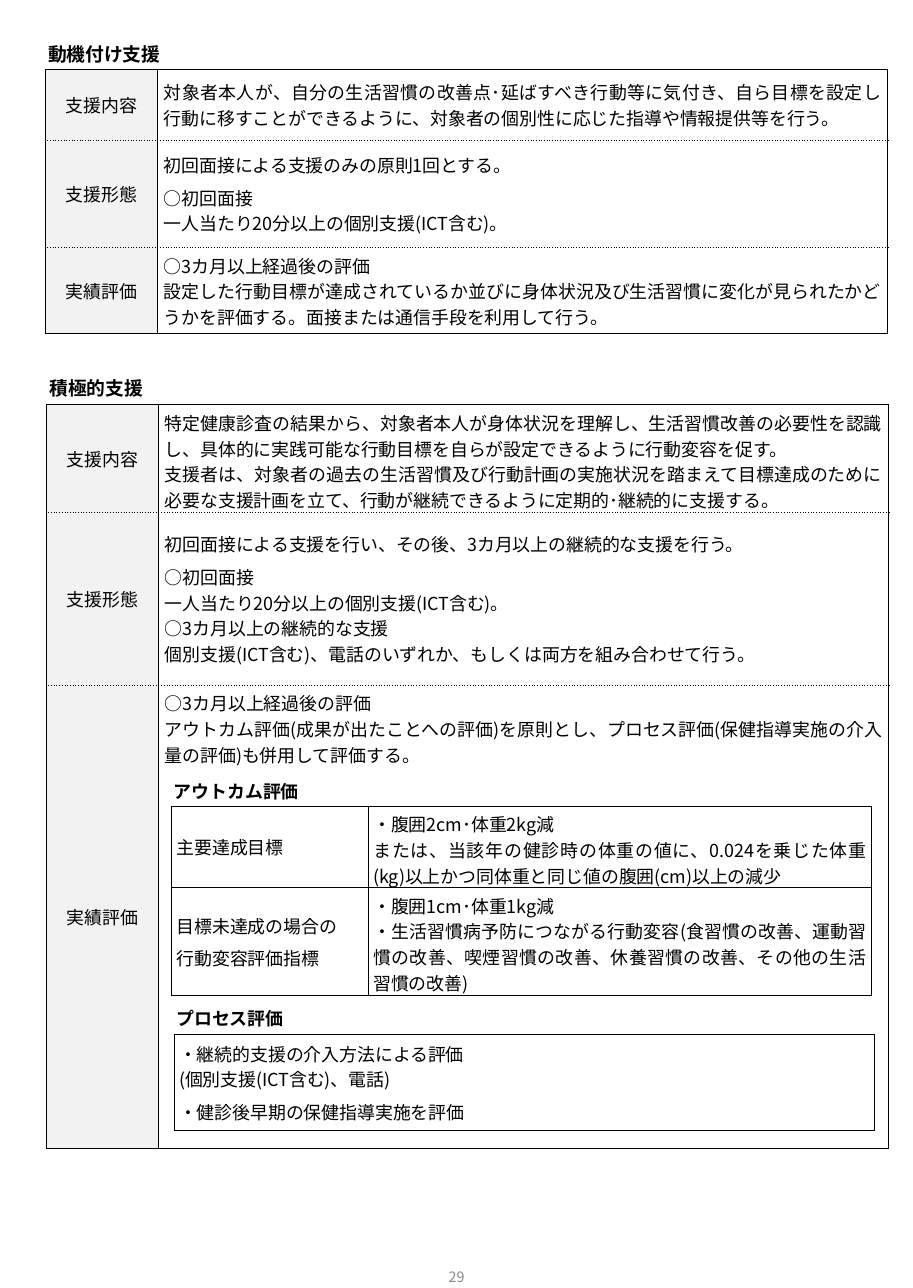
from lxml import etree
from pptx import Presentation
from pptx.dml.color import RGBColor
from pptx.enum import lang, text
from pptx.oxml import ns
from pptx.util import Cm, Pt

FONT = "Noto Sans CJK JP"
BLACK = RGBColor(0x00, 0x00, 0x00)
GRAY = RGBColor(0x89, 0x89, 0x89)
WHITE = RGBColor(0xFF, 0xFF, 0xFF)
LABEL_FILL = RGBColor(0xF2, 0xF2, 0xF2)

LEFT, CENTER, JUSTIFY = (text.PP_ALIGN.LEFT, text.PP_ALIGN.CENTER,
                         text.PP_ALIGN.JUSTIFY)
TOP, MIDDLE = text.MSO_ANCHOR.TOP, text.MSO_ANCHOR.MIDDLE
SPACED = {"space_after": Pt(4)}

SUPPORT_COLUMNS = (2.21, 14.4)
SUPPORT_LABELS = ("支援内容", "支援形態", "実績評価")
MOTIVATION = (
    ["対象者本人が、自分の生活習慣の改善点･延ばすべき行動等に気付き、自ら目標を設定し"
     "行動に移すことができるように、対象者の個別性に応じた指導や情報提供等を行う。"],
    [("初回面接による支援のみの原則1回とする。", SPACED),
     "○初回面接",
     "一人当たり20分以上の個別支援(ICT含む)。"],
    ["○3カ月以上経過後の評価",
     "設定した行動目標が達成されているか並びに身体状況及び生活習慣に変化が見られたかど"
     "うかを評価する。面接または通信手段を利用して行う。"],
)
ACTIVE = (
    ["特定健康診査の結果から、対象者本人が身体状況を理解し、生活習慣改善の必要性を認識"
     "し、具体的に実践可能な行動目標を自らが設定できるように行動変容を促す。",
     "支援者は、対象者の過去の生活習慣及び行動計画の実施状況を踏まえて目標達成のために"
     "必要な支援計画を立て、行動が継続できるように定期的･継続的に支援する。"],
    [("初回面接による支援を行い、その後、3カ月以上の継続的な支援を行う。", SPACED),
     "○初回面接",
     "一人当たり20分以上の個別支援(ICT含む)。",
     "○3カ月以上の継続的な支援",
     "個別支援(ICT含む)、電話のいずれか、もしくは両方を組み合わせて行う。"],
    ["○3カ月以上経過後の評価",
     "アウトカム評価(成果が出たことへの評価)を原則とし、プロセス評価(保健指導実施の"
     "介入量の評価)も併用して評価する。"],
)
OUTCOME = (
    (["主要達成目標"],
     ["・腹囲2cm･体重2kg減",
      "または、当該年の健診時の体重の値に、0.024を乗じた体重(kg)以上かつ同体重と"
      "同じ値の腹囲(cm)以上の減少"]),
    (["目標未達成の場合の", ("行動変容評価指標", {"line_spacing": 1.25})],
     ["・腹囲1cm･体重1kg減",
      "・生活習慣病予防につながる行動変容(食習慣の改善、運動習慣の改善、"
      "喫煙習慣の改善、休養習慣の改善、その他の生活習慣の改善)"]),
)
PROCESS = [
    "・継続的支援の介入方法による評価",
    ("(個別支援(ICT含む)、電話)", SPACED),
    "・健診後早期の保健指導実施を評価",
]


def set_attributes(target, formats):
    for name, value in formats.items():
        setattr(target, name, value)


def write_paragraphs(frame, entries, alignment, size=10, bold=False, color=BLACK):
    """Fill a text frame; an entry is a string or a (string, formats) pair."""
    for index, entry in enumerate(entries):
        words, formats = (entry, {}) if isinstance(entry, str) else entry
        paragraph = frame.paragraphs[0] if index == 0 else frame.add_paragraph()
        set_attributes(paragraph, {"alignment": alignment, **formats})
        run = paragraph.add_run()
        run.text = words
        set_attributes(run.font, {
            "name": FONT, "size": Pt(size), "bold": bold,
            "language_id": lang.MSO_LANGUAGE_ID.JAPANESE})
        run.font.color.rgb = color
        east_asian = etree.SubElement(run.font._element, ns.qn("a:ea"))
        east_asian.set("typeface", FONT)


def format_heading(shape, words, box, size=10.5, wrap=False, anchor=MIDDLE):
    left, top, width, height = map(Cm, box)
    set_attributes(shape, {"left": left, "top": top,
                           "width": width, "height": height})
    frame = shape.text_frame
    set_attributes(frame, {
        "margin_left": 0, "margin_right": 0,
        "margin_top": Cm(0.13), "margin_bottom": Cm(0.13),
        "word_wrap": wrap, "vertical_anchor": anchor,
        "auto_size": text.MSO_AUTO_SIZE.SHAPE_TO_FIT_TEXT})
    write_paragraphs(frame, [words], LEFT, size, bold=True)


def add_text_box(slide):
    return slide.shapes.add_textbox(0, 0, 0, 0)


def add_page_number(slide, number):
    frame = slide.shapes.add_textbox(
        Cm(6.91), Cm(24.51), Cm(4.19), Cm(1.35)).text_frame
    set_attributes(frame, {"word_wrap": True, "vertical_anchor": MIDDLE})
    write_paragraphs(frame, [number], CENTER, 8, color=GRAY)


def set_borders(cell, dashes):
    """Draw black half-point borders; dashes maps each side to its dash."""
    properties = cell._tc.get_or_add_tcPr()
    for side in "LRTB":
        line = etree.SubElement(properties, ns.qn(f"a:ln{side}"), w=str(Pt(0.5)))
        fill = etree.SubElement(line, ns.qn("a:solidFill"))
        etree.SubElement(fill, ns.qn("a:srgbClr"), val=str(BLACK))
        etree.SubElement(line, ns.qn("a:prstDash"), val=dashes.get(side, "solid"))


def fill_cell(cell, entries, margin, alignment=JUSTIFY, fill=None, anchor=MIDDLE):
    set_attributes(cell, {
        "margin_left": Cm(margin), "margin_right": Cm(margin),
        "margin_top": Cm(0.1), "margin_bottom": Cm(0.1),
        "vertical_anchor": anchor})
    write_paragraphs(cell.text_frame, entries, alignment)
    if fill is None:
        cell.fill.background()
    else:
        cell.fill.solid()
        cell.fill.fore_color.rgb = fill


def add_grid(slide, left, top, columns, rows, inner_dash="solid"):
    """Add an empty bordered table; inner_dash styles the lines between rows."""
    table = slide.shapes.add_table(
        len(rows), len(columns), Cm(left), Cm(top),
        Cm(sum(columns)), Cm(sum(rows))).table
    set_attributes(table, {"first_row": False, "horz_banding": False})
    for column, width in zip(table.columns, columns):
        column.width = Cm(width)
    last = len(rows) - 1
    for index, (row, height) in enumerate(zip(table.rows, rows)):
        row.height = Cm(height)
        dashes = {"T": inner_dash if index > 0 else "solid",
                  "B": inner_dash if index < last else "solid"}
        for cell in row.cells:
            set_borders(cell, dashes)
    return table


def add_support_table(slide, left, top, rows, contents, last_anchor=MIDDLE):
    table = add_grid(slide, left, top, SUPPORT_COLUMNS, rows, "sysDot")
    anchors = (MIDDLE, MIDDLE, last_anchor)
    for index, (label, content) in enumerate(zip(SUPPORT_LABELS, contents)):
        fill_cell(table.cell(index, 0), [label], 0.13, CENTER, LABEL_FILL)
        fill_cell(table.cell(index, 1), content, 0.13, anchor=anchors[index])


def add_outcome_table(slide):
    table = add_grid(slide, 3.38, 15.9, (3.88, 9.92), (1.6, 2.13))
    for index, (label, content) in enumerate(OUTCOME):
        fill_cell(table.cell(index, 0), label, 0.1, fill=WHITE)
        fill_cell(table.cell(index, 1), content, 0.1)


def add_process_table(slide):
    table = add_grid(slide, 3.43, 20.4, (13.8,), (1.9,))
    fill_cell(table.cell(0, 0), PROCESS, 0.1)


def main():
    presentation = Presentation()
    set_attributes(presentation, {"slide_width": Cm(18), "slide_height": Cm(25.4)})
    slide = presentation.slides.add_slide(presentation.slide_layouts[5])

    add_page_number(slide, "29")
    format_heading(slide.shapes.title, "動機付け支援", (0.95, 0.71, 2.26, 0.71))
    add_support_table(slide, 0.89, 1.37, (1.4, 2.11, 1.7), MOTIVATION)

    format_heading(add_text_box(slide), "積極的支援", (0.98, 7.3, 1.88, 0.71))
    add_support_table(slide, 0.91, 7.98, (2.13, 3.4, 9.14), ACTIVE, TOP)

    for words, left, top in (("アウトカム評価", 3.43, 15.27),
                             ("プロセス評価", 3.48, 19.74)):
        format_heading(add_text_box(slide), words, (left, top, 4, 0.69),
                       size=10, wrap=True, anchor=TOP)
    add_outcome_table(slide)
    add_process_table(slide)
    presentation.save("out.pptx")


if __name__ == "__main__":
    main()
